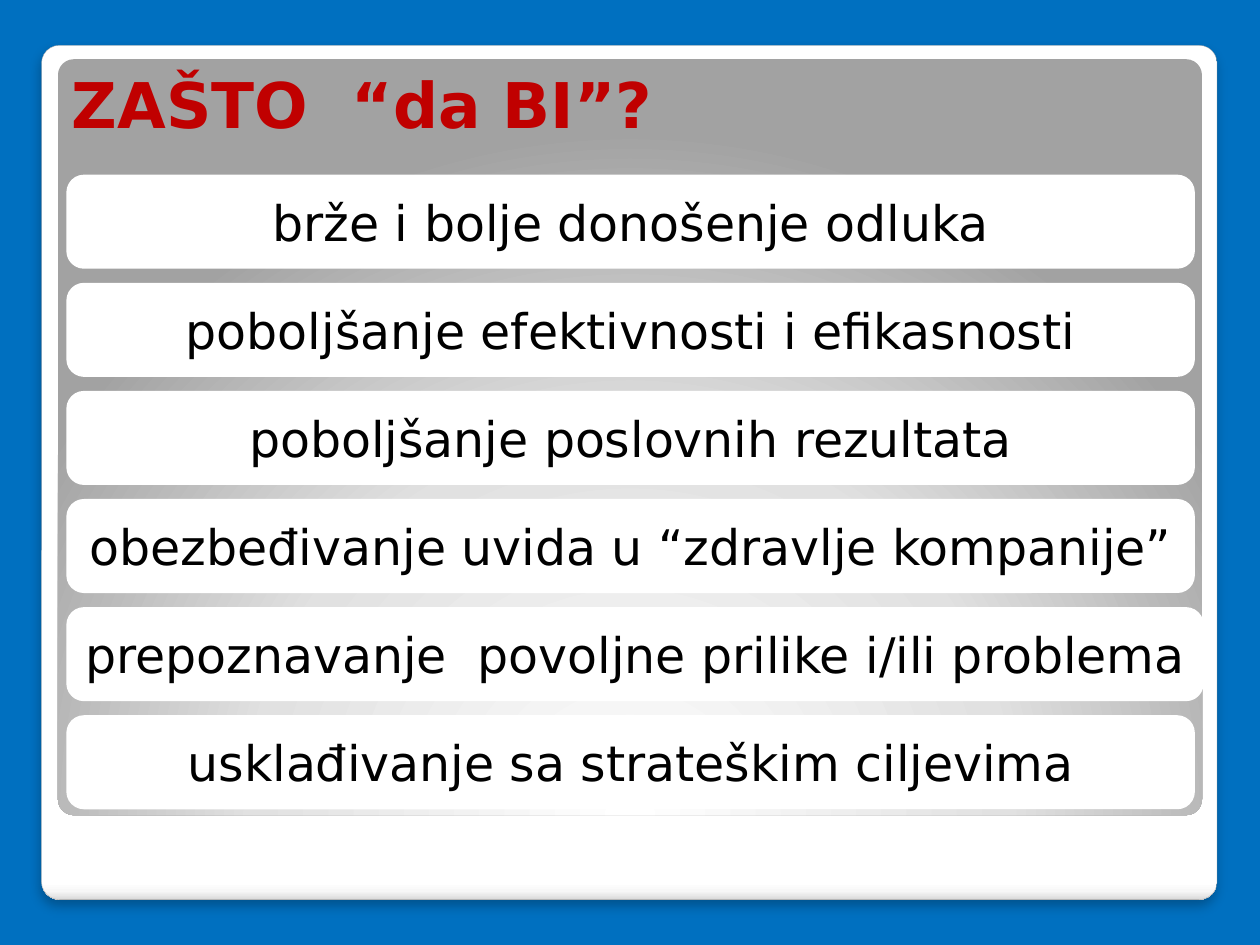
import pptx
import pptx.dml.color
import pptx.enum.shapes
import pptx.enum.text
import pptx.oxml
import pptx.oxml.ns
import pptx.util
from lxml import etree

Inches, Pt = pptx.util.Inches, pptx.util.Pt
RGBColor = pptx.dml.color.RGBColor
qn = pptx.oxml.ns.qn

BLUE = RGBColor(0x00, 0x70, 0xC0)
RED = RGBColor(0xC0, 0x00, 0x00)
BLACK = RGBColor(0x00, 0x00, 0x00)
WHITE = RGBColor(0xFF, 0xFF, 0xFF)
PALE = RGBColor(0xF7, 0xF7, 0xF7)
LIGHT = RGBColor(0xE1, 0xE1, 0xE1)
SILVER = RGBColor(0xDA, 0xDA, 0xDA)
GREY = RGBColor(0xA2, 0xA2, 0xA2)
EDGE = RGBColor(0xA4, 0xA4, 0xA4)

REASONS = [
    "brže i bolje donošenje odluka",
    "poboljšanje efektivnosti i efikasnosti",
    "poboljšanje poslovnih rezultata",
    "obezbeđivanje uvida u “zdravlje kompanije”",
    "prepoznavanje  povoljne prilike i/ili problema",
    "usklađivanje sa strateškim ciljevima",
]
WIDE_ROW = 4  # the longest reason gets a wider bar without side insets
FIRST_TOP, LAST_TOP = 1.41, 5.70


def add_xml(parent, tag, **attrs):
    child = etree.SubElement(parent, qn(tag))
    for name, value in attrs.items():
        child.set(name, str(value))
    return child


class Deck:
    font = "DejaVu Sans"
    title_size = Pt(36)
    body_size = Pt(28)

    def __init__(self, prs):
        self.slide = prs.slides.add_slide(prs.slide_layouts[5])
        fill = self.slide.background.fill
        fill.solid()
        fill.fore_color.rgb = BLUE

    def style(self, p, size, color, bold=False):
        for r in p.runs:
            r.font.name = self.font
            r.font.size = size
            r.font.bold = bold
            r.font.color.rgb = color

    def box(self, left, top, width, height):
        sp = self.slide.shapes.add_shape(
            pptx.enum.shapes.MSO_SHAPE.ROUNDED_RECTANGLE,
            Inches(left), Inches(top), Inches(width), Inches(height))
        sp.shadow.inherit = False
        return sp

    def panel(self, left, top, width, height, stops, radial=False):
        sp = self.box(left, top, width, height)
        sp.adjustments[0] = 0.021
        sp.line.fill.background()
        sp.fill.gradient()
        grad = sp._element.spPr.find(qn("a:gradFill"))
        for child in list(grad):
            grad.remove(child)
        stop_list = add_xml(grad, "a:gsLst")
        for percent, color in stops:
            stop = add_xml(stop_list, "a:gs", pos=percent * 1000)
            add_xml(stop, "a:srgbClr", val=color)
        if radial:
            circle = add_xml(grad, "a:path", path="circle")
            add_xml(circle, "a:fillToRect", l=50000, t=175000, r=50000, b=-75000)
        else:
            add_xml(grad, "a:lin", ang=90 * 60000, scaled=0)
        return sp

    def outline(self, sp, color, width):
        sp.line.color.rgb = color
        sp.line.width = Pt(width)

    def drop_shadow(self, sp):
        effects = sp._element.spPr.find(qn("a:effectLst"))
        shadow = add_xml(effects, "a:outerShdw", blurRad=Pt(6), dist=Pt(4),
                         dir=90 * 60000, algn="t", rotWithShape=0)
        color = add_xml(shadow, "a:srgbClr", val=BLACK)
        add_xml(color, "a:alpha", val=25000)

    def title(self, text, left, top, width, height):
        sp = self.slide.shapes.title
        sp.left, sp.top = Inches(left), Inches(top)
        sp.width, sp.height = Inches(width), Inches(height)
        self.slide.shapes._spTree.append(sp._element)  # in front of the panels
        tf = sp.text_frame
        tf.text = text
        tf.auto_size = pptx.enum.text.MSO_AUTO_SIZE.NONE
        tf.vertical_anchor = pptx.enum.text.MSO_ANCHOR.BOTTOM
        p = tf.paragraphs[0]
        p.alignment = pptx.enum.text.PP_ALIGN.LEFT
        self.style(p, self.title_size, RED, bold=True)

    def bar(self, text, left, top, width, height, side_inset):
        sp = self.box(left, top, width, height)
        sp.fill.solid()
        sp.fill.fore_color.rgb = WHITE
        self.outline(sp, WHITE, 3.35)
        tf = sp.text_frame
        tf.text = text
        tf.word_wrap = True
        tf.margin_left = tf.margin_right = Inches(side_inset)
        tf.vertical_anchor = pptx.enum.text.MSO_ANCHOR.MIDDLE
        p = tf.paragraphs[0]
        p.alignment = pptx.enum.text.PP_ALIGN.CENTER
        self.style(p, self.body_size, BLACK)


def main():
    prs = pptx.Presentation()
    prs.slide_width, prs.slide_height = Inches(10), Inches(7.5)
    deck = Deck(prs)

    # White card and grey panel
    card = deck.panel(0.33, 0.36, 9.33, 6.78,
                      [(0, WHITE), (98, WHITE), (99, PALE), (100, SILVER)])
    deck.outline(card, EDGE, 0.16)
    deck.drop_shadow(card)
    deck.panel(0.46, 0.47, 9.08, 6,
               [(0, WHITE), (55, LIGHT), (100, GREY)], radial=True)

    # Title
    deck.title("ZAŠTO  “da BI”?", 0.47, 0.47, 8.95, 0.7)

    # Evenly spaced reasons
    pitch = (LAST_TOP - FIRST_TOP) / (len(REASONS) - 1)
    for i, reason in enumerate(REASONS):
        width, inset = (8.98, 0) if i == WIDE_ROW else (8.91, 0.1)
        deck.bar(reason, 0.55, FIRST_TOP + i * pitch, width, 0.7, inset)

    prs.save("out.pptx")


if __name__ == "__main__":
    main()
